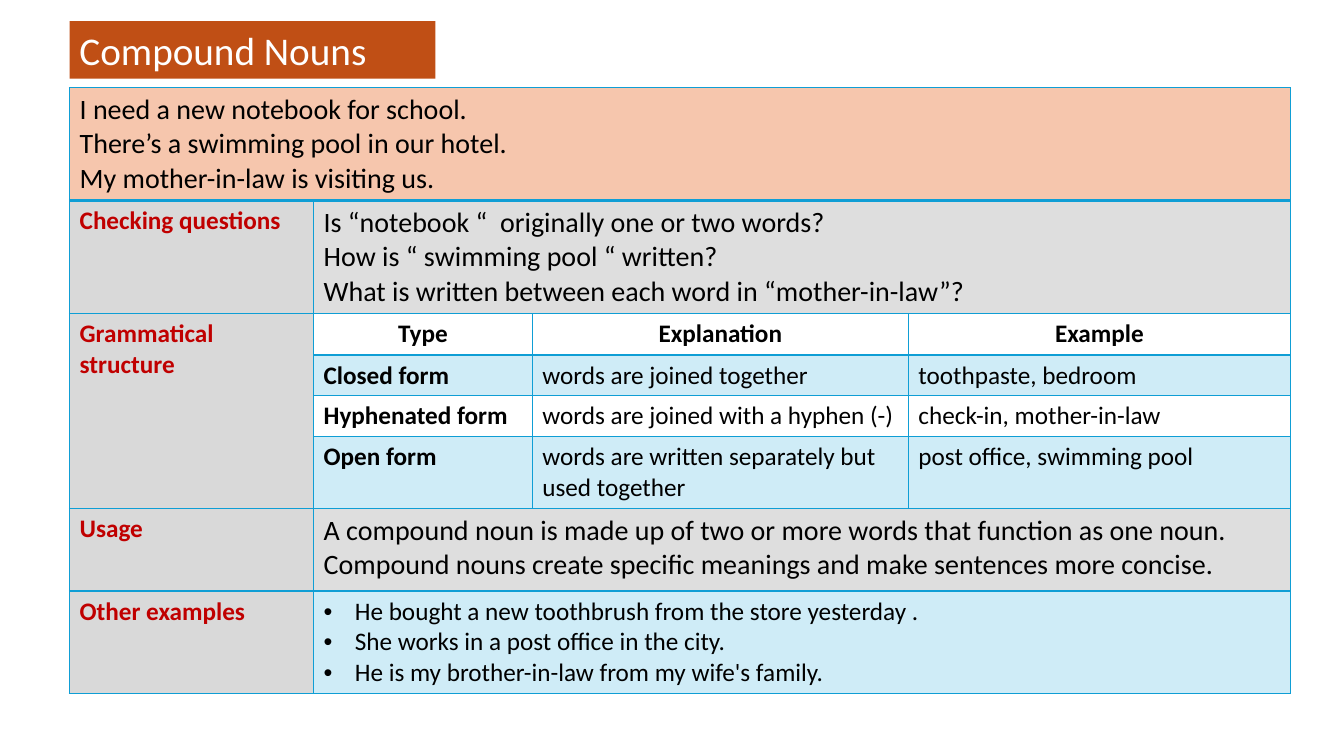
from lxml.etree import SubElement
from pptx import Presentation
from pptx.dml.color import RGBColor
from pptx.enum.shapes import MSO_SHAPE
from pptx.enum.text import MSO_ANCHOR, PP_ALIGN
from pptx.oxml.ns import qn
from pptx.util import Inches, Pt

FONT = "Calibri"
COLORS = {
    "title": "C04F15", "peach": "F6C6AD", "label": "D9D9D9", "gray": "DEDEDE",
    "blue": "CFECF7", "white": "FFFFFF", "black": "000000", "red": "C00000",
    "border": "0F9ED5",
}
TITLE = "Compound Nouns"
SENTENCES = [
    "I need a new notebook for school.",
    "There’s a swimming pool in our hotel.",
    "My mother-in-law is visiting us.",
]
QUESTIONS = [
    "Is “notebook “  originally one or two words?",
    "How is “ swimming pool “ written?",
    "What is written between each word in “mother-in-law”?",
]
FORMS = [
    ("Type", "Explanation", "Example"),
    ("Closed form", "words are joined together", "toothpaste, bedroom"),
    ("Hyphenated form", "words are joined with a hyphen (-)", "check-in, mother-in-law"),
    ("Open form", "words are written separately but used together",
     "post office, swimming pool"),
]
USAGE = [
    "A compound noun is made up of two or more words that function as one noun. "
    "Compound nouns create specific meanings and make sentences more concise."
]
EXAMPLES = [
    "He bought a new toothbrush from the store yesterday .",
    "She works in a post office in the city.",
    "He is my brother-in-law from my wife's family.",
]
LABELS = {1: "Checking questions", 2: "Grammatical structure",
          6: "Usage", 7: "Other examples"}
# row: (lines, size, fill, bulleted)
WIDE_ROWS = {1: (QUESTIONS, 20, "gray", False), 6: (USAGE, 20, "gray", False),
             7: (EXAMPLES, 18, "blue", True)}
FIRST_FORM_ROW = 2
LAST_FORM_ROW = FIRST_FORM_ROW + len(FORMS) - 1
COLUMN_WIDTHS = [2.42, 2.17, 3.73, 3.79]
ROW_HEIGHTS = [1.12, 1.12, 0.41, 0.4, 0.4, 0.71, 0.82, 1.01]
LEFT, TABLE_TOP = 0.69, 0.87


def color(name):
    return RGBColor.from_string(COLORS[name])


def add_text(paragraph, text, size, color_name="black", bold=False):
    run = paragraph.add_run()
    run.text = text
    run.font.name = FONT
    run.font.size = Pt(size)
    run.font.bold = bold
    run.font.color.rgb = color(color_name)


def add_bullet(paragraph):
    properties = paragraph._p.get_or_add_pPr()
    properties.set("marL", str(Inches(0.31)))
    properties.set("indent", str(Inches(-0.31)))
    SubElement(properties, qn("a:buFont"), typeface="Arial")
    SubElement(properties, qn("a:buChar"), char="•")


def fill_cell(cell, lines, size, fill, color_name="black", bold=False,
              centered=False, bulleted=False):
    cell.fill.solid()
    cell.fill.fore_color.rgb = color(fill)
    for index, line in enumerate(lines):
        frame = cell.text_frame
        paragraph = frame.add_paragraph() if index else frame.paragraphs[0]
        paragraph.alignment = PP_ALIGN.CENTER if centered else PP_ALIGN.LEFT
        if bulleted:
            add_bullet(paragraph)
        add_text(paragraph, line, size, color_name, bold)


def set_borders(cell, row):
    """Draw all four sides; the line under the sentences is twice as thick."""
    properties = cell._tc.get_or_add_tcPr()
    thick_side = {0: "lnB", 1: "lnT"}.get(row)
    for index, side in enumerate(("lnL", "lnR", "lnT", "lnB")):
        width = Pt(2 if side == thick_side else 1)
        line = SubElement(properties, qn(f"a:{side}"), w=str(width))
        fill = SubElement(line, qn("a:solidFill"))
        SubElement(fill, qn("a:srgbClr"), val=COLORS["border"])
        properties.insert(index, line)


def add_title(slide):
    title = slide.shapes.add_shape(MSO_SHAPE.RECTANGLE, Inches(LEFT), Inches(0.21),
                                   Inches(3.63), Inches(0.57))
    title.shadow.inherit = False
    title.fill.solid()
    title.fill.fore_color.rgb = color("title")
    title.line.fill.background()
    title.text_frame.word_wrap = True
    paragraph = title.text_frame.paragraphs[0]
    paragraph.alignment = PP_ALIGN.LEFT
    add_text(paragraph, TITLE, 28, "white")


def add_grammar_table(slide):
    table = slide.shapes.add_table(
        len(ROW_HEIGHTS), len(COLUMN_WIDTHS), Inches(LEFT), Inches(TABLE_TOP),
        Inches(sum(COLUMN_WIDTHS)), Inches(sum(ROW_HEIGHTS))).table
    table.first_row = table.horz_banding = False
    for column, width in zip(table.columns, COLUMN_WIDTHS):
        column.width = Inches(width)
    for row, height in zip(table.rows, ROW_HEIGHTS):
        row.height = Inches(height)

    last_column = len(COLUMN_WIDTHS) - 1
    table.cell(0, 0).merge(table.cell(0, last_column))
    table.cell(FIRST_FORM_ROW, 0).merge(table.cell(LAST_FORM_ROW, 0))
    fill_cell(table.cell(0, 0), SENTENCES, 20, "peach")
    table.cell(0, 0).vertical_anchor = MSO_ANCHOR.MIDDLE

    for row, label in LABELS.items():
        fill_cell(table.cell(row, 0), [label], 18, "label", "red", bold=True)
    for row, (lines, size, fill, bulleted) in WIDE_ROWS.items():
        table.cell(row, 1).merge(table.cell(row, last_column))
        fill_cell(table.cell(row, 1), lines, size, fill, bulleted=bulleted)
    for index, form in enumerate(FORMS):
        for column, text in enumerate(form, start=1):
            heading = index == 0
            fill_cell(table.cell(FIRST_FORM_ROW + index, column), [text], 18,
                      "blue" if index % 2 else "white",
                      bold=heading or column == 1, centered=heading)

    for row in range(len(ROW_HEIGHTS)):
        for column in range(len(COLUMN_WIDTHS)):
            set_borders(table.cell(row, column), row)


def main():
    presentation = Presentation()
    presentation.slide_width = Inches(13.33)
    presentation.slide_height = Inches(7.5)
    slide = presentation.slides.add_slide(presentation.slide_layouts[6])
    add_grammar_table(slide)
    add_title(slide)
    presentation.save("out.pptx")


if __name__ == "__main__":
    main()
